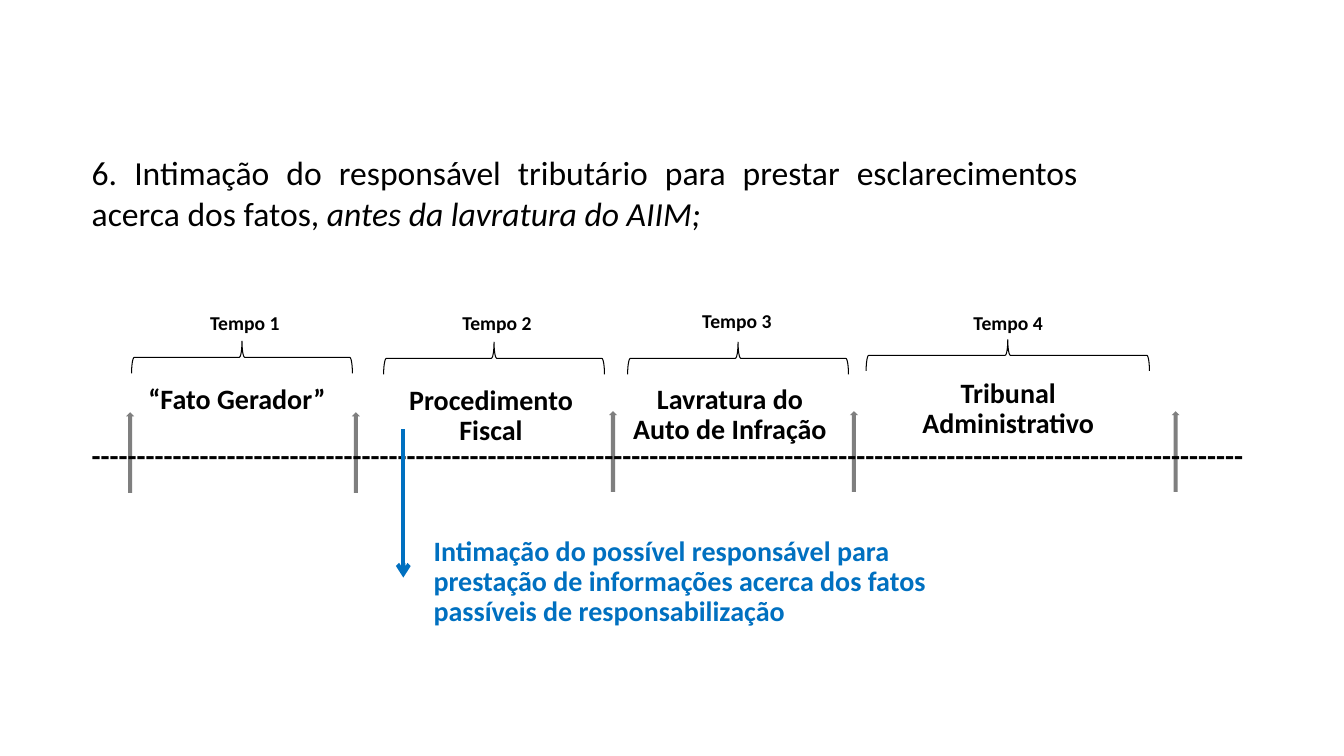
from dataclasses import dataclass
from lxml import etree
from pptx import Presentation, util as u
from pptx.dml.color import RGBColor
from pptx.enum import shapes, text
from pptx.oxml import ns


@dataclass(frozen=True)
class Theme:
    font: str = "Calibri"
    black: RGBColor = RGBColor(0, 0, 0)
    grey: RGBColor = RGBColor(0x7F, 0x7F, 0x7F)
    blue: RGBColor = RGBColor(0, 0x70, 0xC0)
    title: int = 24
    axis: int = 21
    label: int = 20
    period: int = 14


theme = Theme()
ALIGN = text.PP_ALIGN
ANCHOR = text.MSO_ANCHOR


def add_run(p, words, size, color=theme.black, bold=False, italic=False):
    r = p.add_run()
    r.text = words
    r.font.name = theme.font
    r.font.size = u.Pt(size)
    r.font.color.rgb = color
    r.font.bold = bold
    r.font.italic = italic


def add_label(box, lines, size, color=theme.black, align=ALIGN.CENTER, anchor=ANCHOR.MIDDLE):
    tf = s.shapes.add_textbox(*map(u.Inches, box)).text_frame
    tf.word_wrap = True
    tf.vertical_anchor = anchor
    tf.margin_left = tf.margin_right = u.Inches(0.07)
    tf.margin_top = tf.margin_bottom = u.Inches(0.04)
    for i, line in enumerate(lines):
        p = tf.paragraphs[0] if i == 0 else tf.add_paragraph()
        p.alignment = align
        p.line_spacing = 0.9
        add_run(p, line, size, color, bold=True)


prs = Presentation()
prs.slide_width = u.Inches(13.33)
prs.slide_height = u.Inches(7.5)
s = prs.slides.add_slide(prs.slide_layouts[5])

title = s.shapes.title
title.left, title.top, title.width, title.height = map(u.Inches, (0.81, 1.46, 9.98, 0.91))
tf = title.text_frame
tf.word_wrap = True
tf.auto_size = text.MSO_AUTO_SIZE.NONE
tf.vertical_anchor = ANCHOR.TOP
p = tf.paragraphs[0]
p.alignment = ALIGN.JUSTIFY
p.line_spacing = 1.0
add_run(p, "6. Intimação do responsável tributário para prestar esclarecimentos acerca dos fatos, ", theme.title)
add_run(p, "antes da lavratura do AIIM;", theme.title, italic=True)

for left, top in [(1.25, 4.09), (3.49, 4.09), (6.04, 4.08), (8.43, 4.08), (11.62, 4.08)]:
    mark = s.shapes.add_shape(shapes.MSO_SHAPE.UP_ARROW, *map(u.Inches, (left, top, 0.08, 0.8)))
    mark.shadow.inherit = False
    mark.fill.solid()
    mark.fill.fore_color.rgb = theme.grey
    mark.line.fill.background()

periods = [
    ("Tempo 1", (1.9, 2.93, 1.06, 0.58), (2.24, 2.45, 0.32, 2.19),
     ["“Fato Gerador”"], (1.34, 3.56, 2.02, 0.82)),
    ("Tempo 2", (4.4, 2.93, 1.06, 0.58), (4.74, 2.46, 0.32, 2.19),
     ["Procedimento", "Fiscal"], (3.76, 3.72, 2.22, 0.83)),
    ("Tempo 3", (6.78, 2.91, 1.06, 0.58), (7.16, 2.46, 0.32, 2.19),
     ["Lavratura do", "Auto de Infração"], (6.07, 3.71, 2.34, 0.82)),
    ("Tempo 4", (9.28, 2.93, 1.44, 0.58), (9.84, 2.12, 0.31, 2.81),
     ["Tribunal Administrativo"], (8.92, 3.65, 2.16, 0.82)),
]
for period, period_box, brace_box, stage, stage_box in periods:
    add_label(period_box, [period], theme.period)
    brace = s.shapes.add_shape(shapes.MSO_SHAPE.LEFT_BRACE, *map(u.Inches, brace_box))
    brace.rotation = 90
    brace.shadow.inherit = False
    brace.fill.background()
    brace.line.color.rgb = theme.black
    brace.line.width = u.Pt(0.75)
    add_label(stage_box, stage, theme.label)

add_label((0.84, 4.34, 11.87, 0.56), ["-" * 128], theme.axis, align=ALIGN.LEFT, anchor=ANCHOR.TOP)

notice = s.shapes.add_connector(shapes.MSO_CONNECTOR.STRAIGHT, *map(u.Inches, (4, 4.26, 4, 5.73)))
notice.line.color.rgb = theme.blue
notice.line.width = u.Pt(3)
etree.SubElement(notice.line._get_or_add_ln(), ns.qn("a:tailEnd"), type="arrow")
etree.SubElement(notice._element.spPr, ns.qn("a:effectLst"))

add_label((4.23, 5.14, 5.51, 1.28),
          ["Intimação do possível responsável para prestação de informações acerca dos fatos passíveis de responsabilização"],
          theme.label, theme.blue, ALIGN.LEFT)

prs.save("out.pptx")
